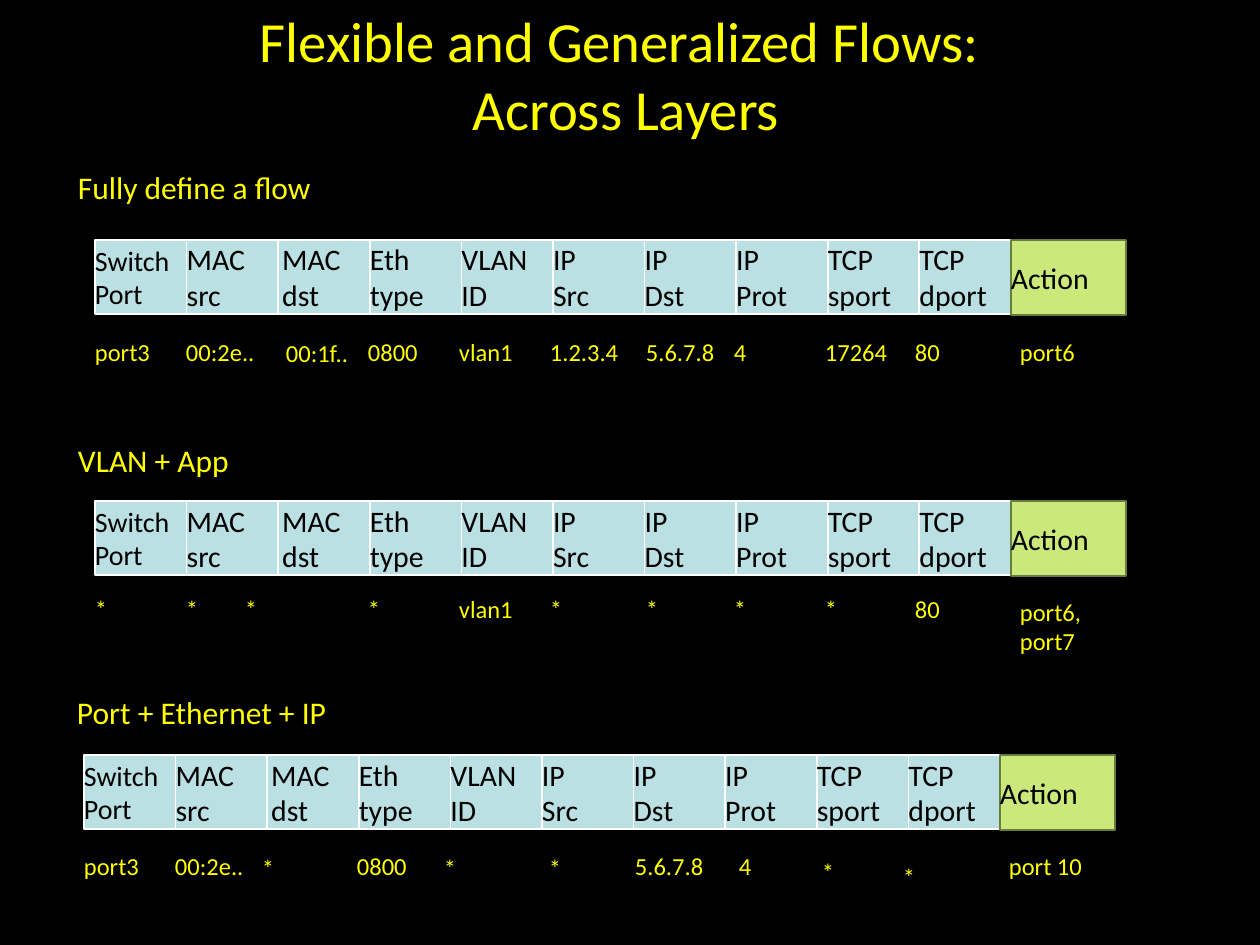
import pptx
import pptx.dml.color
import pptx.enum.shapes
import pptx.enum.text
import pptx.util

PX = 914400 / 126
FONT = "Calibri"
BLACK = pptx.dml.color.RGBColor(0x00, 0x00, 0x00)
WHITE = pptx.dml.color.RGBColor(0xFF, 0xFF, 0xFF)
YELLOW = pptx.dml.color.RGBColor(0xFF, 0xFF, 0x00)
FIELD_BLUE = pptx.dml.color.RGBColor(0xBB, 0xE0, 0xE3)
ACTION_GREEN = pptx.dml.color.RGBColor(0xCB, 0xE9, 0x7B)
ACTION_EDGE = pptx.dml.color.RGBColor(0x69, 0x7D, 0x3A)

FIELDS = ["Switch\nPort", "MAC\nsrc", "MAC\ndst", "Eth\ntype", "VLAN\nID",
          "IP\nSrc", "IP\nDst", "IP\nProt", "TCP\nsport", "TCP\ndport"]
FIELDS_WIDTH, FIELD_HEIGHT = 916, 74
ACTION_WIDTH, ACTION_HEIGHT = 115, 75
VALUE_LEFTS = [0, 91, 191, 273, 364, 455, 551, 639, 730, 820, 925]
VALUE_WIDTH, VALUE_HEIGHT = 91, 44

# Heading box, header corner, drop to the values, values, and (right, down)
# shifts for the values that stand off their column.
FLOWS = [
    ("Fully define a flow", (78, 168, 273, 38), (95, 240), 90,
     ["port3", "00:2e..", "00:1f..", "0800", "vlan1", "1.2.3.4", "5.6.7.8",
      "4", "17264", "80", "port6"],
     {2: (0, 1)}),
    ("VLAN + App", (78, 441, 165, 38), (95, 501), 86,
     ["*", "*", "*", "*", "vlan1", "*", "*", "*", "*", "80", "port6,\nport7"],
     {2: (-41, 0), 10: (0, 17)}),
    ("Port + Ethernet + IP", (77, 693, 256, 38), (84, 755), 89,
     ["port3", "00:2e..", "*", "0800", "*", "*", "5.6.7.8", "4", "*", "*",
      "port 10"],
     {2: (-13, 2), 4: (-4, 2), 5: (10, 2), 7: (16, 0), 8: (8, 6), 9: (-1, 11)}),
]


def emu(box):
    return [pptx.util.Emu(round(length * PX)) for length in box]


def style_run(run, size, color):
    run.font.name = FONT
    run.font.size = pptx.util.Pt(size)
    run.font.color.rgb = color


def write(frame, text, size, color, inset=0, wrap=True):
    """Fill a text frame, one paragraph for each line of the text."""
    frame.margin_left = emu([inset])[0]
    frame.margin_top = frame.margin_right = frame.margin_bottom = 0
    frame.vertical_anchor = pptx.enum.text.MSO_ANCHOR.MIDDLE
    frame.word_wrap = wrap
    for index, line in enumerate(text.split("\n")):
        paragraph = frame.add_paragraph() if index else frame.paragraphs[0]
        paragraph.alignment = pptx.enum.text.PP_ALIGN.LEFT
        run = paragraph.add_run()
        run.text = line
        style_run(run, size, color)


def add_label(shapes, box, text, size, wrap=True):
    label = shapes.add_textbox(*emu(box))
    write(label.text_frame, text, size, YELLOW, wrap=wrap)


def add_cell(shapes, box, text, fill, edge, size=17, inset=0):
    cell = shapes.add_shape(pptx.enum.shapes.MSO_SHAPE.RECTANGLE, *emu(box))
    cell.shadow.inherit = False
    cell.fill.solid()
    cell.fill.fore_color.rgb = fill
    cell.line.color.rgb = edge
    cell.line.width = pptx.util.Pt(1)
    write(cell.text_frame, text, size, BLACK, inset)


def add_title(shapes, box):
    title = shapes.add_textbox(*emu(box)).text_frame
    title.word_wrap = True
    title.vertical_anchor = pptx.enum.text.MSO_ANCHOR.MIDDLE
    paragraph = title.paragraphs[0]
    paragraph.alignment = pptx.enum.text.PP_ALIGN.CENTER
    for index, line in enumerate(["Flexible and Generalized Flows:",
                                  " Across Layers"]):
        if index:
            paragraph.add_line_break()
        run = paragraph.add_run()
        run.text = line
        style_run(run, 32.4, YELLOW)


def add_header(shapes, left, top):
    """Group the match fields and the action cell in one row."""
    cells = shapes.add_group_shape().shapes
    pitch = FIELDS_WIDTH / len(FIELDS)
    for column, field in enumerate(FIELDS):
        add_cell(cells, (left + column * pitch, top, pitch, FIELD_HEIGHT),
                 field, FIELD_BLUE, WHITE,
                 size=16 if column == 0 else 17, inset=4 if column == 2 else 0)
    add_cell(cells, (left + FIELDS_WIDTH, top, ACTION_WIDTH, ACTION_HEIGHT),
             "Action", ACTION_GREEN, ACTION_EDGE)


def add_values(shapes, left, top, values, shifts):
    for column, value in enumerate(values):
        right, down = shifts.get(column, (0, 0))
        add_label(shapes, (left + VALUE_LEFTS[column] + right, top + down,
                           VALUE_WIDTH, VALUE_HEIGHT), value, 14)


def add_flow(shapes, heading, heading_box, corner, drop, values, shifts):
    left, top = corner
    add_label(shapes, heading_box, heading, 18, wrap=False)
    add_header(shapes, left, top)
    add_values(shapes, left, top + drop, values, shifts)


def main():
    deck = pptx.Presentation()
    deck.slide_width, deck.slide_height = emu((1260, 945))
    slide = deck.slides.add_slide(deck.slide_layouts[6])
    slide.background.fill.solid()
    slide.background.fill.fore_color.rgb = BLACK
    add_title(slide.shapes, (0, 32, 1239, 84))
    for flow in FLOWS:
        add_flow(slide.shapes, *flow)
    deck.save("out.pptx")


if __name__ == "__main__":
    main()
